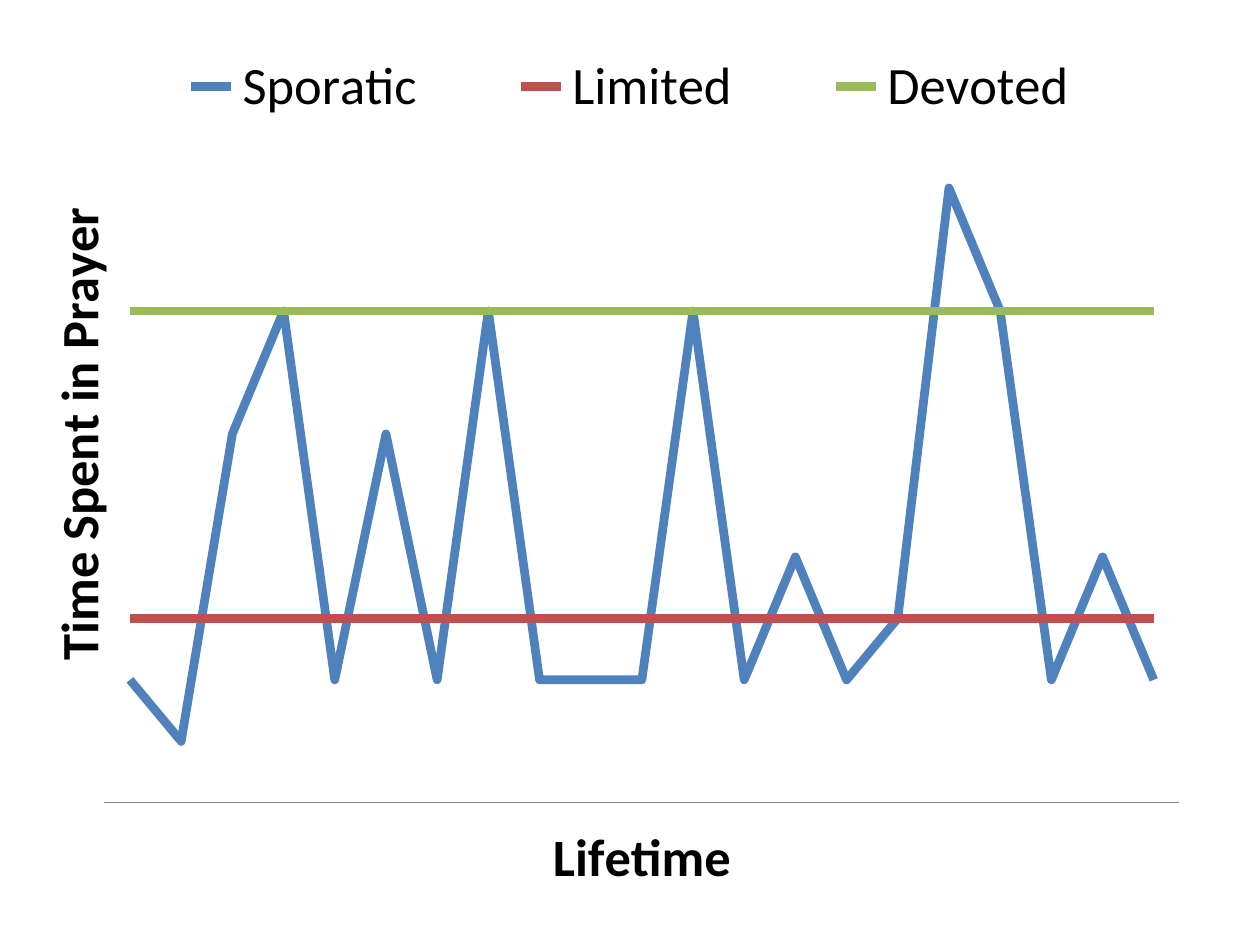
import pptx
import pptx.chart.data
import pptx.dml.color
import pptx.enum.chart
import pptx.oxml
import pptx.oxml.ns
import pptx.util
from pptx.util import Inches

COLORS = {
    "text": "000000",
    "axis": "868686",
    "Sporatic": "4F81BD",
    "Limited": "C0504D",
    "Devoted": "9BBB59",
}
POINTS = 21
PRAYER_TIMES = {
    "Sporatic": [20, 10, 60, 80, 20, 60, 20, 80, 20, 20, 20,
                 80, 20, 40, 20, 30, 100, 80, 20, 40, 20],
    "Limited": [30] * POINTS,
    "Devoted": [80] * POINTS,
}


def rgb(name):
    return pptx.dml.color.RGBColor.from_string(COLORS[name])


def manual_layout(x, y, width, height, inner=False):
    """Return a c:layout element with fractions of the chart area."""
    target = '<c:layoutTarget val="inner"/>' if inner else ""
    return pptx.oxml.parse_xml(
        f'<c:layout {pptx.oxml.ns.nsdecls("c")}><c:manualLayout>{target}'
        '<c:xMode val="edge"/><c:yMode val="edge"/>'
        f'<c:x val="{x}"/><c:y val="{y}"/><c:w val="{width}"/><c:h val="{height}"/>'
        '</c:manualLayout></c:layout>'
    )


class ChartPage:
    font_name = "Calibri"
    label_size = pptx.util.Pt(30)
    line_width = pptx.util.Pt(5)

    def __init__(self, deck):
        self.page = deck.slides.add_slide(deck.slide_layouts[6])

    def style_font(self, font, size, bold=False):
        font.name = self.font_name
        font.size = size
        font.bold = bold
        font.color.rgb = rgb("text")

    def line_chart(self, series_values, left, top, width, height):
        data = pptx.chart.data.CategoryChartData()
        data.categories = [str(number + 1) for number in range(POINTS)]
        for name, values in series_values.items():
            data.add_series(name, values)
        chart = self.page.shapes.add_chart(
            pptx.enum.chart.XL_CHART_TYPE.LINE, left, top, width, height, data
        ).chart
        chart.has_title = False
        self.style_font(chart.font, pptx.util.Pt(10))
        plot = chart.plots[0]
        plot.vary_by_categories = False
        for series in plot.series:
            series.smooth = False
            series.marker.style = pptx.enum.chart.XL_MARKER_STYLE.NONE
            series.format.line.width = self.line_width
            series.format.line.color.rgb = rgb(series.name)
        return chart

    def axis_title(self, axis, text, upright=False):
        frame = axis.axis_title.text_frame
        frame.text = text
        self.style_font(frame.paragraphs[0].font, self.label_size, bold=True)
        if upright:
            body = frame._txBody.bodyPr
            body.set("rot", "-5400000")
            body.set("vert", "horz")

    def category_axis(self, chart, title):
        axis = chart.category_axis
        axis.major_tick_mark = pptx.enum.chart.XL_TICK_MARK.NONE
        axis.tick_label_position = pptx.enum.chart.XL_TICK_LABEL_POSITION.NONE
        axis.format.line.color.rgb = rgb("axis")
        axis.format.line.width = pptx.util.Pt(0.75)
        self.axis_title(axis, title)

    def hidden_value_axis(self, chart, title, maximum, step):
        axis = chart.value_axis
        axis.minimum_scale = 0
        axis.maximum_scale = maximum
        axis.major_unit = step
        axis.has_major_gridlines = False
        axis.visible = False
        self.axis_title(axis, title, upright=True)

    def top_legend(self, chart, layout):
        chart.has_legend = True
        legend = chart.legend
        legend.position = pptx.enum.chart.XL_LEGEND_POSITION.TOP
        legend.include_in_layout = False
        self.style_font(legend.font, self.label_size)
        for old in legend._element.findall(pptx.oxml.ns.qn("c:layout")):
            legend._element.remove(old)
        legend._element.find(pptx.oxml.ns.qn("c:legendPos")).addnext(layout)

    def plot_layout(self, chart, layout):
        area = chart._chartSpace.chart.plotArea
        for old in area.findall(pptx.oxml.ns.qn("c:layout")):
            area.remove(old)
        area.insert(0, layout)


def main():
    deck = pptx.Presentation()
    deck.slide_width = Inches(10)
    deck.slide_height = Inches(7.5)

    page = ChartPage(deck)
    chart = page.line_chart(
        PRAYER_TIMES, Inches(0.26), Inches(0.31), Inches(9.48), Inches(6.89)
    )
    page.category_axis(chart, "Lifetime")
    page.hidden_value_axis(chart, "Time Spent in Prayer", maximum=120, step=20)
    page.top_legend(chart, manual_layout(0.06, 0, 0.88, 0.11))
    page.plot_layout(chart, manual_layout(0.06, 0.03, 0.9, 0.85, inner=True))

    deck.save("out.pptx")


if __name__ == "__main__":
    main()
